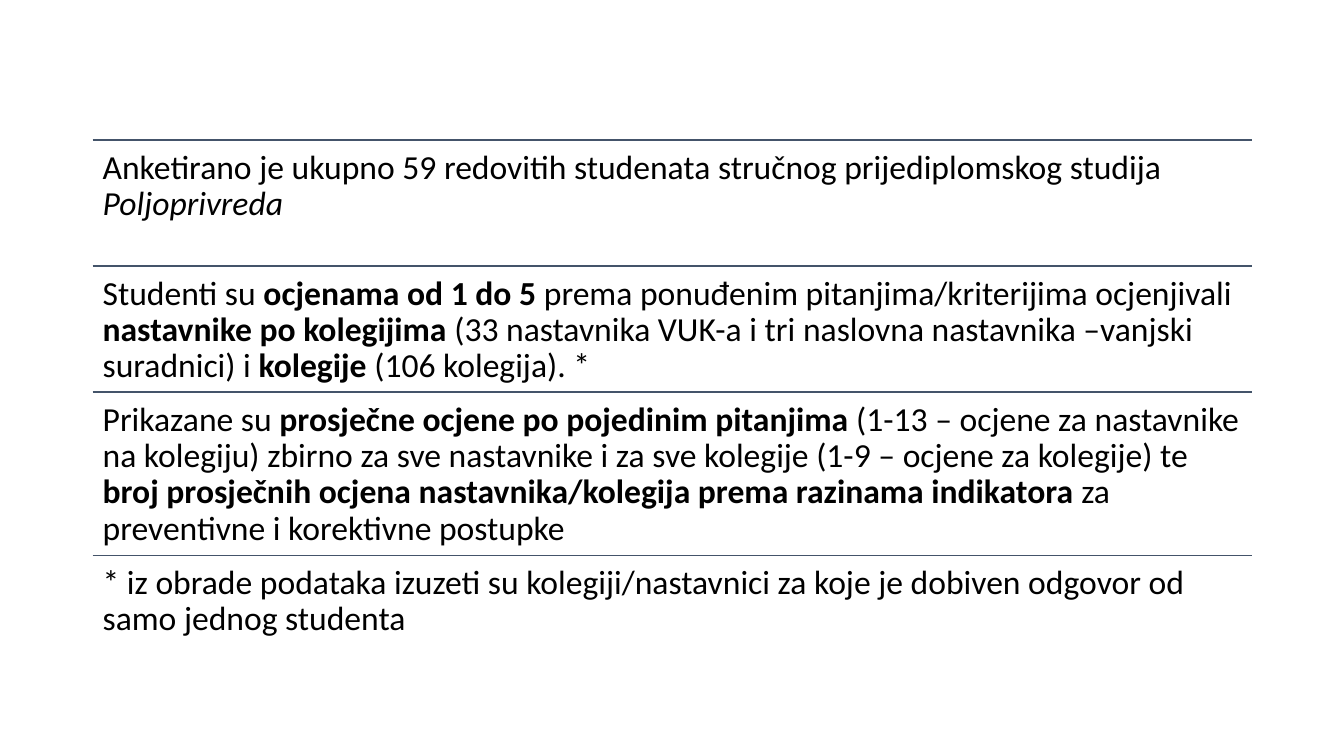
import dataclasses

import lxml.etree
import pptx
import pptx.dml.color
import pptx.enum.shapes
import pptx.enum.text
import pptx.oxml.ns
import pptx.util

COLORS = {"text": "000000", "rule": "44546A"}
FONT = "Calibri"
WIDTH, HEIGHT = 13.33, 7.5

# Grid: one column; row heights are shares of the slide height
LEFT = 0.92 / WIDTH
COLUMN = 11.5 / WIDTH
TOP = 1.39 / HEIGHT
ROW = 1.25 / HEIGHT
TALL_ROW = 1.62 / HEIGHT


@dataclasses.dataclass
class Run:
    text: str
    bold: bool = False
    italic: bool = False


@dataclasses.dataclass
class Row:
    runs: list[Run]
    height: float = ROW


ROWS = [
    Row([
        Run("Anketirano je ukupno 59 redovitih studenata stručnog prijediplomskog studija "),
        Run("Poljoprivreda", italic=True),
    ]),
    Row([
        Run("Studenti su "),
        Run("ocjenama od 1 do 5 ", bold=True),
        Run("prema ponuđenim pitanjima/kriterijima ocjenjivali "),
        Run("nastavnike po kolegijima ", bold=True),
        Run("(33 nastavnika VUK-a i tri naslovna nastavnika –vanjski suradnici) i "),
        Run("kolegije", bold=True),
        Run(" (106 kolegija). *"),
    ]),
    Row([
        Run("Prikazane su "),
        Run("prosječne ocjene po pojedinim pitanjima ", bold=True),
        Run("(1-13 – ocjene za nastavnike na kolegiju) zbirno za sve nastavnike "
            "i za sve kolegije (1-9 – ocjene za kolegije) te "),
        Run("broj prosječnih ocjena nastavnika/kolegija prema razinama indikatora ", bold=True),
        Run("za preventivne i korektivne postupke"),
    ], TALL_ROW),
    Row([
        Run("* iz obrade podataka izuzeti su kolegiji/nastavnici za koje je dobiven "
            "odgovor od samo jednog studenta"),
    ]),
]


def x(share: float) -> int:
    return pptx.util.Inches(share * WIDTH)


def y(share: float) -> int:
    return pptx.util.Inches(share * HEIGHT)


def rgb(name: str) -> pptx.dml.color.RGBColor:
    return pptx.dml.color.RGBColor.from_string(COLORS[name])


def add_run(p, text: str, *, size: float = 24, color: str = "text",
            bold: bool = False, italic: bool = False) -> None:
    r = p.add_run()
    r.text = text
    r.font.name = FONT
    r.font.size = pptx.util.Pt(size)
    r.font.bold = bold
    r.font.italic = italic
    r.font.color.rgb = rgb(color)


def add_rule(s, top: float) -> None:
    line = s.shapes.add_connector(pptx.enum.shapes.MSO_CONNECTOR.STRAIGHT,
                                  x(LEFT), y(top), x(LEFT + COLUMN), y(top))
    line.line.color.rgb = rgb("rule")
    line.line.width = pptx.util.Pt(1)
    lxml.etree.SubElement(line._element.spPr, pptx.oxml.ns.qn("a:effectLst"))


def add_row(s, row: Row, top: float) -> None:
    sp = s.shapes.add_textbox(x(LEFT), y(top), x(COLUMN), y(row.height))
    tf = sp.text_frame
    tf.word_wrap = True
    tf.vertical_anchor = pptx.enum.text.MSO_ANCHOR.TOP
    tf.margin_left = tf.margin_right = pptx.util.Inches(0.1)
    tf.margin_top = tf.margin_bottom = pptx.util.Inches(0.1)
    p = tf.paragraphs[0]
    p.line_spacing = 0.9
    for run in row.runs:
        add_run(p, run.text, bold=run.bold, italic=run.italic)


def main() -> None:
    prs = pptx.Presentation()
    prs.slide_width = pptx.util.Inches(WIDTH)
    prs.slide_height = pptx.util.Inches(HEIGHT)
    s = prs.slides.add_slide(prs.slide_layouts[6])

    # Ruled rows, stacked from the top
    top = TOP
    for row in ROWS:
        add_rule(s, top)
        add_row(s, row, top)
        top += row.height

    prs.save("out.pptx")


if __name__ == "__main__":
    main()
